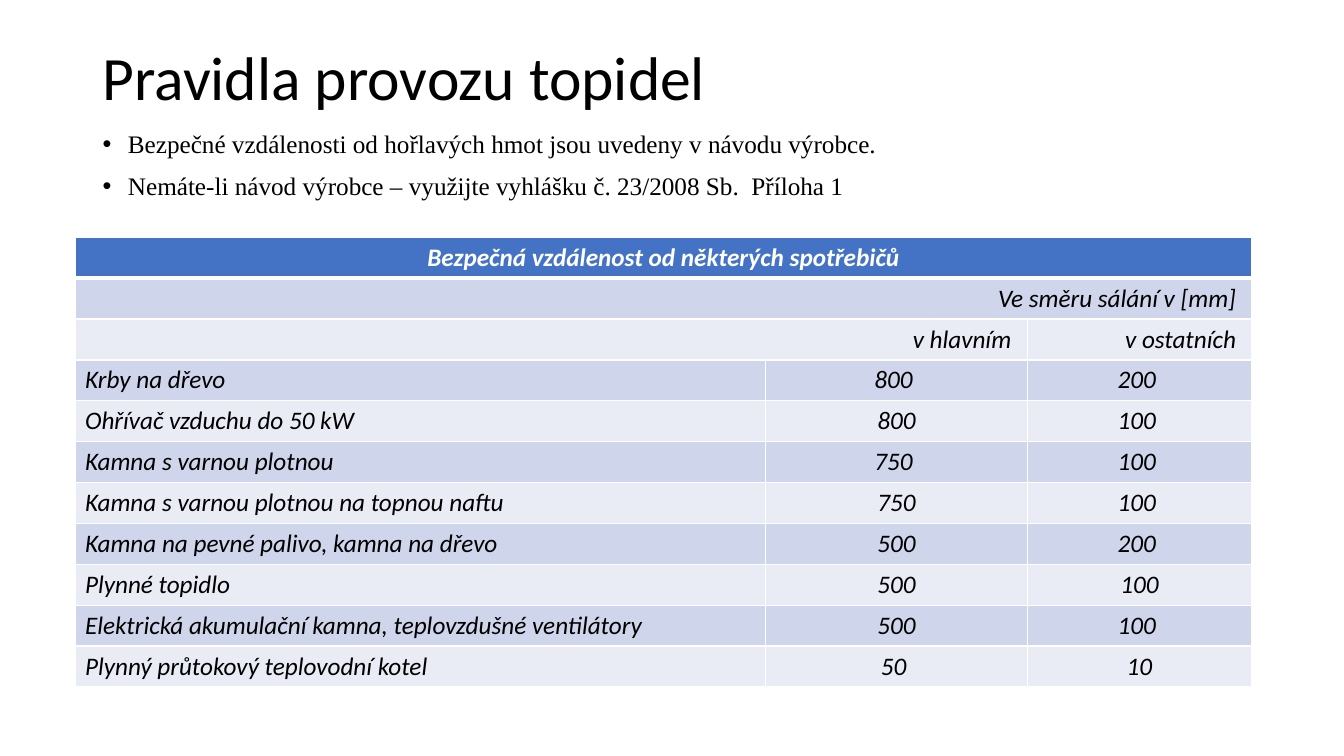
from lxml import etree
from pptx import Presentation
from pptx import util as u
from pptx.dml.color import RGBColor
from pptx.enum import text
from pptx.oxml import ns

COLORS = {
    "ink": "000000",
    "white": "FFFFFF",
    "header": "4472C4",
    "band_dark": "CFD5EA",
    "band_light": "E9EBF5",
}
LEFT, CENTER, RIGHT = (text.PP_ALIGN.LEFT, text.PP_ALIGN.CENTER,
                       text.PP_ALIGN.RIGHT)

HEADING = "Pravidla provozu topidel"
RULES = [
    "Bezpečné vzdálenosti od hořlavých hmot jsou uvedeny v návodu výrobce.",
    "Nemáte-li návod výrobce – využijte vyhlášku č. 23/2008 Sb.  Příloha 1",
]
# Each heading row lists (first column, last column, text)
HEADING_ROWS = [
    [(0, 2, "Bezpečná vzdálenost od některých spotřebičů")],
    [(0, 2, "Ve směru sálání v [mm] ")],
    [(0, 1, "v hlavním "), (2, 2, "v ostatních ")],
]
APPLIANCES = [
    ("Krby na dřevo", "800 ", "200 "),
    ("Ohřívač vzduchu do 50 kW", "800", "100 "),
    ("Kamna s varnou plotnou", "750 ", "100 "),
    ("Kamna s varnou plotnou na topnou naftu", "750", "100 "),
    ("Kamna na pevné palivo, kamna na dřevo", "500", "200 "),
    ("Plynné topidlo", "500", "100"),
    ("Elektrická akumulační kamna, teplovzdušné ventilátory", "500", "100 "),
    ("Plynný průtokový teplovodní kotel", "50 ", "10"),
]
COLUMN_SHARES = (0.587, 0.222, 0.191)


def rgb(name):
    return RGBColor.from_string(COLORS[name])


def set_font(paragraph, family, size, color="ink", bold=False, italic=False):
    font = paragraph.font
    font.name, font.size = family, u.Pt(size)
    font.bold, font.italic = bold, italic
    font.color.rgb = rgb(color)


def place(shape, box):
    shape.left, shape.top, shape.width, shape.height = map(u.Cm, box)


def fill_title(title, box):
    place(title, box)
    frame = title.text_frame
    frame.text = HEADING
    frame.auto_size = text.MSO_AUTO_SIZE.NONE
    frame.vertical_anchor = text.MSO_ANCHOR.MIDDLE
    line = frame.paragraphs[0]
    line.alignment, line.line_spacing = LEFT, 0.9
    set_font(line, "Calibri", 44)


def fill_rules(body, box):
    place(body, box)
    frame = body.text_frame
    frame.text = "\n".join(RULES)
    frame.auto_size = text.MSO_AUTO_SIZE.NONE
    for index, rule in enumerate(frame.paragraphs):
        rule.line_spacing = 0.9
        rule.space_before = u.Pt(10 if index else 0)
        # Hanging bullet
        props = rule._p.get_or_add_pPr()
        props.set("marL", str(u.Cm(0.64)))
        props.set("indent", str(-u.Cm(0.64)))
        etree.SubElement(props, ns.qn("a:buFont"), typeface="Arial")
        etree.SubElement(props, ns.qn("a:buChar"), char="•")
        set_font(rule, "Times New Roman", 18)


def set_borders(cell, row):
    widths = {"L": 1, "R": 1, "T": 3 if row == 1 else 1,
              "B": 3 if row == 0 else 1}
    props = cell._tc.get_or_add_tcPr()
    for side, width in widths.items():
        line = etree.SubElement(props, ns.qn("a:ln" + side),
                                w=str(u.Pt(width)))
        solid = etree.SubElement(line, ns.qn("a:solidFill"))
        etree.SubElement(solid, ns.qn("a:srgbClr"), val=COLORS["white"])


def write_cell(cell, words, alignment, header=False):
    cell.text = words
    line = cell.text_frame.paragraphs[0]
    line.alignment = alignment
    set_font(line, "Calibri", 18, "white" if header else "ink",
             bold=header, italic=True)


def add_distances(slide, box):
    row_count = len(HEADING_ROWS) + len(APPLIANCES)
    table = slide.shapes.add_table(row_count, len(COLUMN_SHARES),
                                   *map(u.Cm, box)).table
    for column, share in zip(table.columns, COLUMN_SHARES):
        column.width = u.Cm(box[2] * share)

    # Bands and borders
    for index, row in enumerate(table.rows):
        row.height = u.Cm(box[3] / row_count)
        band = "band_dark" if index % 2 else "band_light"
        for cell in row.cells:
            set_borders(cell, index)
            cell.fill.solid()
            cell.fill.fore_color.rgb = rgb(band if index else "header")

    # Merged headings
    for index, headings in enumerate(HEADING_ROWS):
        for first, last, words in headings:
            cell = table.cell(index, first)
            if last > first:
                cell.merge(table.cell(index, last))
            write_cell(cell, words, RIGHT if index else CENTER, index == 0)

    # Appliances with their distances
    for index, appliance in enumerate(APPLIANCES, len(HEADING_ROWS)):
        for column, words in enumerate(appliance):
            write_cell(table.cell(index, column), words,
                       CENTER if column else LEFT)


def main():
    deck = Presentation()
    deck.slide_width, deck.slide_height = u.Cm(33.87), u.Cm(19.05)
    slide = deck.slides.add_slide(deck.slide_layouts[1])
    title, body = slide.placeholders
    fill_title(title, (2.33, 1.01, 29.21, 2.04))
    fill_rules(body, (2.33, 3.2, 29.21, 12.09))
    add_distances(slide, (1.89, 5.98, 29.66, 11.33))
    deck.save("out.pptx")


if __name__ == "__main__":
    main()
